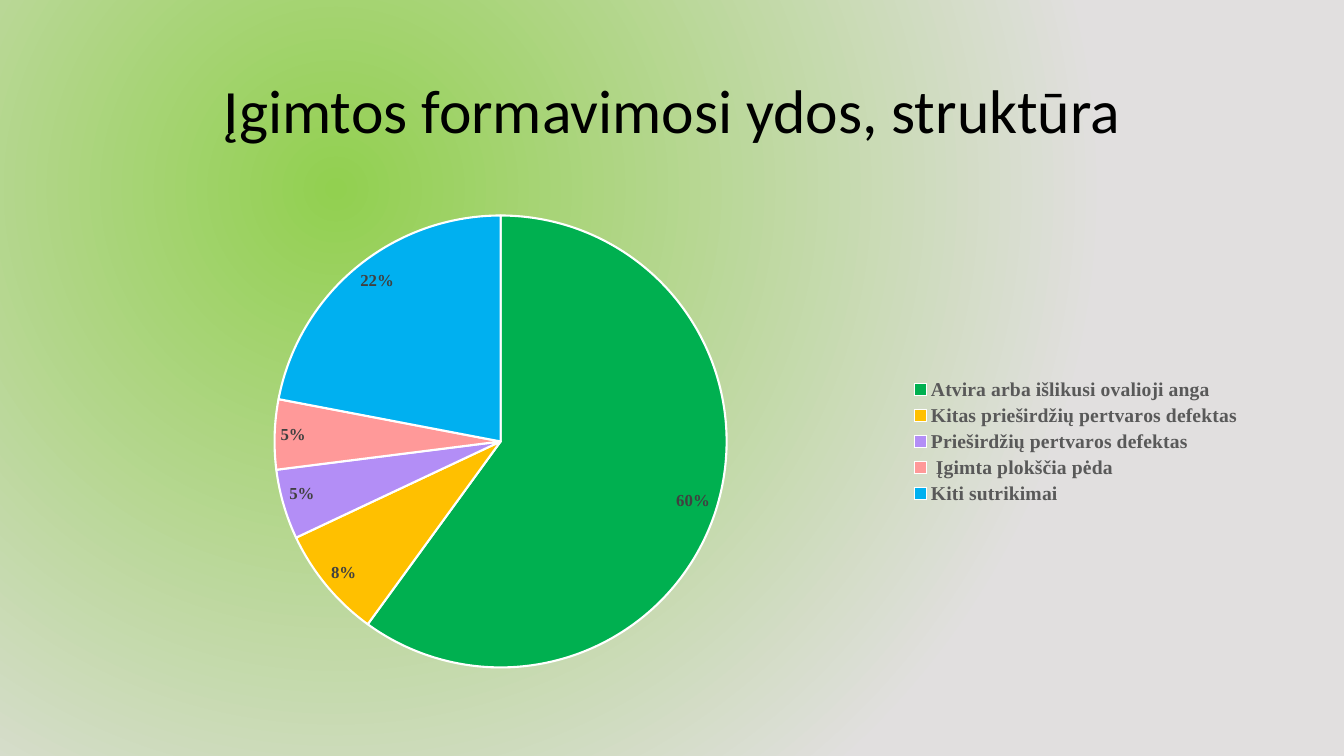
from dataclasses import dataclass

from lxml.etree import SubElement
from pptx import Presentation
from pptx.chart.data import CategoryChartData
from pptx.dml.color import RGBColor
from pptx.enum.chart import XL_CHART_TYPE as ChartType
from pptx.enum.chart import XL_LABEL_POSITION as LabelPosition
from pptx.enum.chart import XL_LEGEND_POSITION as LegendPosition
from pptx.enum.text import MSO_ANCHOR as Anchor
from pptx.enum.text import PP_ALIGN as Align
from pptx.oxml.ns import qn
from pptx.util import Inches, Pt


@dataclass(frozen=True)
class Theme:
    glow: str = "92D050"
    ground: str = "E1DFDF"
    ink: str = "000000"
    label_ink: str = "404040"
    legend_ink: str = "595959"
    edge: str = "FFFFFF"
    heading_face: str = "Calibri"
    chart_face: str = "Times New Roman"
    title_size: int = 44
    legend_size: int = 14
    label_size: int = 12
    chart_size: int = 10


THEME = Theme()
TITLE = "Įgimtos formavimosi ydos, struktūra"
DEFECTS = [
    ("Atvira arba išlikusi ovalioji anga", 60, "00B050"),
    ("Kitas prieširdžių pertvaros defektas", 8, "FFC000"),
    ("Prieširdžių pertvaros defektas", 5, "B38EF6"),
    (" Įgimta plokščia pėda", 5, "FF9999"),
    ("Kiti sutrikimai", 22, "00B0F0"),
]


def assign(target, values):
    for name, value in values.items():
        setattr(target, name, value)


def style_font(font, face, size, color, bold=False):
    assign(font, {"name": face, "size": Pt(size), "bold": bold})
    font.color.rgb = RGBColor.from_string(color)


def paint_background(page):
    """Fill the page with a circular glow centred in its upper left quarter."""
    fill = page.background.fill
    fill.gradient()
    for stop, color, position in zip(fill.gradient_stops, (THEME.glow, THEME.ground), (0, 1)):
        stop.color.rgb = RGBColor.from_string(color)
        stop.position = position
    gradient = page.element.find(f".//{qn('a:gradFill')}")
    gradient.remove(gradient.find(qn("a:lin")))
    circle = SubElement(gradient, qn("a:path"), path="circle")
    SubElement(circle, qn("a:fillToRect"), l="50000", t="50000", r="100000", b="100000")


def place_title(page, left, top, width, height):
    title = page.shapes.title
    assign(title, {"left": left, "top": top, "width": width, "height": height})
    title.text_frame.vertical_anchor = Anchor.MIDDLE
    para = title.text_frame.paragraphs[0]
    assign(para, {"alignment": Align.CENTER, "line_spacing": 0.9})
    span = para.add_run()
    span.text = TITLE
    style_font(span.font, THEME.heading_face, THEME.title_size, THEME.ink)


def place_pie(page, left, top, width, height):
    names, shares, colors = zip(*DEFECTS)
    data = CategoryChartData()
    data.categories = names
    data.add_series("Series 1", shares)
    chart = page.shapes.add_chart(ChartType.PIE, left, top, width, height, data).chart
    assign(chart, {"has_title": False, "has_legend": True})
    style_font(chart.font, THEME.heading_face, THEME.chart_size, THEME.ink)

    legend = chart.legend
    assign(legend, {"position": LegendPosition.RIGHT, "include_in_layout": False})
    style_font(legend.font, THEME.chart_face, THEME.legend_size, THEME.legend_ink, True)

    plot = chart.plots[0]
    plot.vary_by_categories = True
    series = plot.series[0]
    for index, color in enumerate(colors):
        look = series.points[index].format
        look.fill.solid()
        look.fill.fore_color.rgb = RGBColor.from_string(color)
        look.line.color.rgb = RGBColor.from_string(THEME.edge)
        look.line.width = Pt(1.5)

    labels = series.data_labels
    assign(labels, {
        "show_percentage": True,
        "show_value": False,
        "number_format": "0%",
        "number_format_is_linked": False,
        "position": LabelPosition.INSIDE_END,
    })
    style_font(labels.font, THEME.chart_face, THEME.label_size, THEME.label_ink, True)


def main():
    deck = Presentation()
    assign(deck, {"slide_width": Inches(13.33), "slide_height": Inches(7.5)})
    page = deck.slides.add_slide(deck.slide_layouts.get_by_name("Title Only"))
    paint_background(page)
    left, width = Inches(0.92), Inches(11.5)
    place_title(page, left, Inches(0.4), width, Inches(1.45))
    place_pie(page, left, Inches(2), width, Inches(4.76))
    deck.save("out.pptx")


if __name__ == "__main__":
    main()
